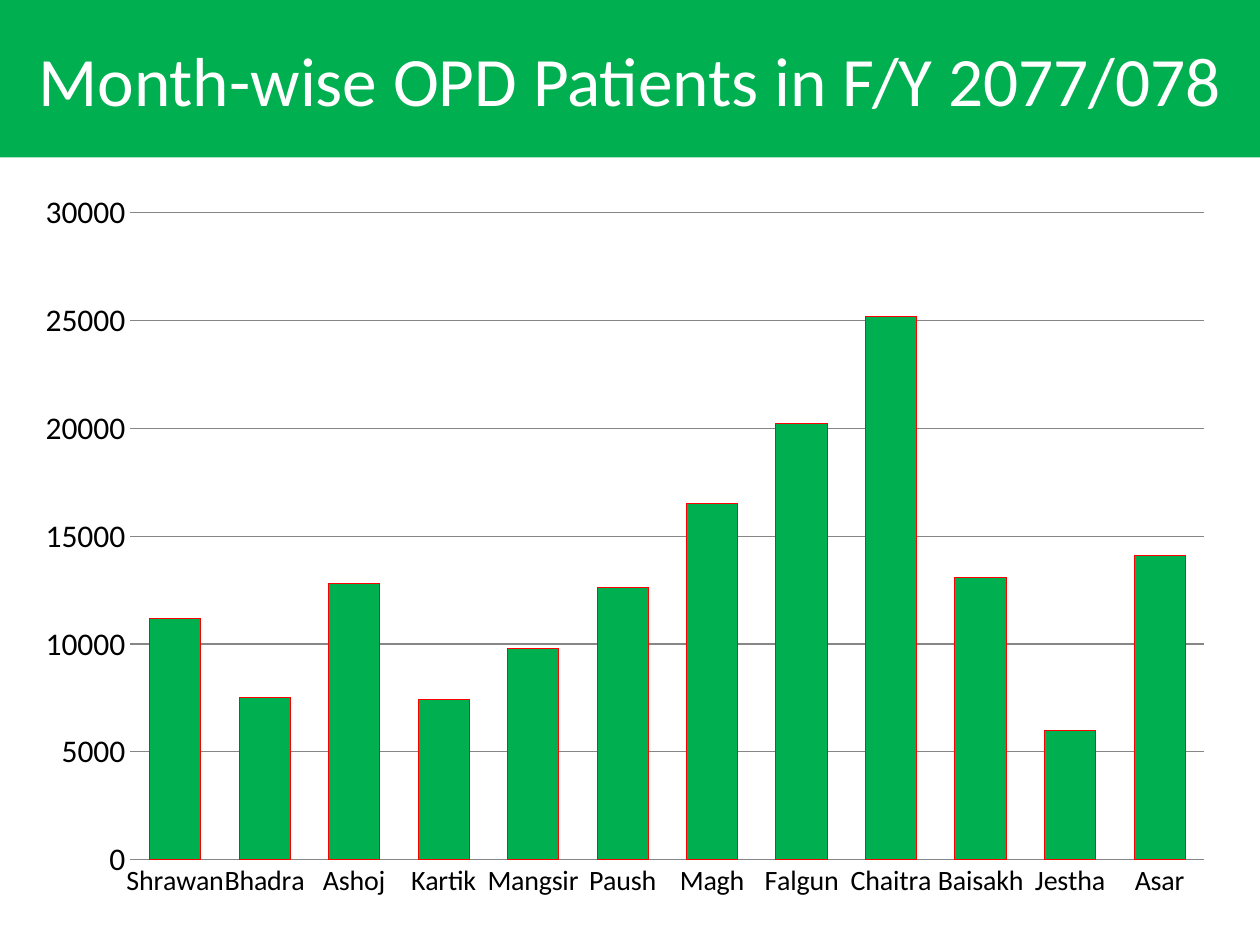
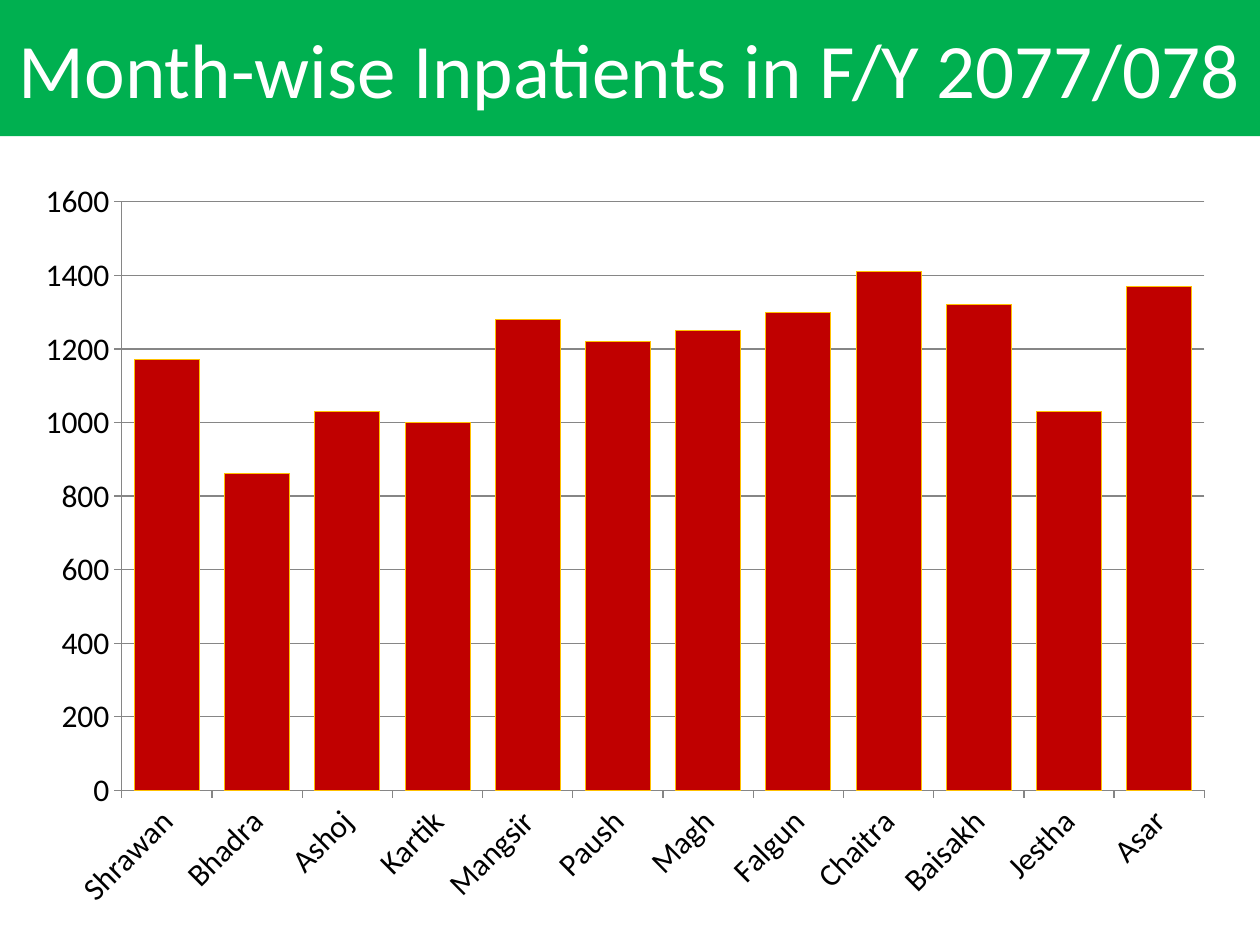
import pptx
import pptx.util
import pptx.chart.data
import pptx.dml.color
import pptx.enum.chart
import pptx.enum.shapes
import pptx.enum.text

Inches = pptx.util.Inches
Pt = pptx.util.Pt
RGB = pptx.dml.color.RGBColor
KIND = pptx.enum.chart.XL_CHART_TYPE
TICK = pptx.enum.chart.XL_TICK_MARK

GREEN = RGB(0x00, 0xB0, 0x50)
RED = RGB(0xFF, 0x00, 0x00)
DARK = RGB(0xC0, 0x00, 0x00)
GOLD = RGB(0xFF, 0xC0, 0x00)
GREY = RGB(0x86, 0x86, 0x86)
BLACK = RGB(0x00, 0x00, 0x00)
WHITE = RGB(0xFF, 0xFF, 0xFF)
FONT = "Calibri"
MONTHS = ["Shrawan", "Bhadra", "Ashoj", "Kartik", "Mangsir", "Paush",
          "Magh", "Falgun", "Chaitra", "Baisakh", "Jestha", "Asar"]
OPD = [11200, 7500, 12800, 7400, 9800, 12600,
       16500, 20200, 25200, 13100, 6000, 14100]
WARD = [1170, 860, 1030, 1000, 1280, 1220,
        1250, 1300, 1410, 1320, 1030, 1370]


def add_band(slide, box, text, size):
    """Green title band."""
    band = slide.shapes.add_shape(
        pptx.enum.shapes.MSO_SHAPE.RECTANGLE, *map(Inches, box))
    band.shadow.inherit = False
    band.fill.solid()
    band.fill.fore_color.rgb = GREEN
    band.line.fill.background()
    frame = band.text_frame
    frame.word_wrap = True
    frame.vertical_anchor = pptx.enum.text.MSO_ANCHOR.MIDDLE
    para = frame.paragraphs[0]
    para.alignment = pptx.enum.text.PP_ALIGN.CENTER
    run = para.add_run()
    run.text = text
    run.font.name = FONT
    run.font.size = Pt(size)
    run.font.color.rgb = WHITE


def style_axis(axis, size, tick):
    axis.major_tick_mark = tick
    axis.minor_tick_mark = TICK.NONE
    axis.format.line.color.rgb = GREY
    font = axis.tick_labels.font
    font.name = FONT
    font.size = Pt(size)
    font.color.rgb = BLACK


def add_bars(slide, box, kind, values, fill, edge, gap, top, step,
             size, tick, turn=None):
    """Column chart with one bar for each month."""
    data = pptx.chart.data.CategoryChartData()
    data.categories = MONTHS
    data.add_series("Series 1", values)
    chart = slide.shapes.add_chart(kind, *map(Inches, box), data).chart
    chart.has_legend = False
    chart.has_title = False
    chart.font.name = FONT
    chart.font.size = Pt(10)
    chart.font.color.rgb = BLACK

    # Bars with a hairline edge
    plot = chart.plots[0]
    plot.vary_by_categories = False
    plot.gap_width = gap
    bars = plot.series[0].format
    bars.fill.solid()
    bars.fill.fore_color.rgb = fill
    bars.line.color.rgb = edge

    # Axes
    months, scale = chart.category_axis, chart.value_axis
    style_axis(months, size, tick)
    style_axis(scale, 18, tick)
    months.has_major_gridlines = False
    body = months._element.txPr.find(pptx.oxml.ns.qn("a:bodyPr"))
    body.attrib.clear()
    if turn is not None:
        body.set("rot", str(turn * 60000))
        body.set("vert", "horz")
    scale.minimum_scale = 0
    scale.maximum_scale = top
    scale.major_unit = step
    scale.has_major_gridlines = True
    scale.major_gridlines.format.line.color.rgb = GREY
    if tick == TICK.NONE:
        scale.format.line.fill.background()


def main():
    deck = pptx.Presentation()
    deck.slide_width = Inches(10)
    deck.slide_height = Inches(7.5)
    blank = deck.slide_layouts[6]

    # Outpatients
    slide = deck.slides.add_slide(blank)
    add_band(slide, (0, 0, 10, 1.25),
             "Month-wise OPD Patients in F/Y 2077/078", 39.6)
    add_bars(slide, (0.17, 1.42, 9.58, 5.83), KIND.COLUMN_STACKED, OPD,
             GREEN, RED, gap=75, top=30000, step=5000,
             size=16, tick=TICK.NONE)

    # Inpatients
    slide = deck.slides.add_slide(blank)
    add_band(slide, (0, 0, 10, 1.08),
             "Month-wise Inpatients in F/Y 2077/078", 44)
    add_bars(slide, (0.17, 1.33, 9.58, 6), KIND.COLUMN_CLUSTERED, WARD,
             DARK, GOLD, gap=39, top=1600, step=200,
             size=18, tick=TICK.OUTSIDE, turn=-45)

    deck.save("out.pptx")


if __name__ == "__main__":
    main()
